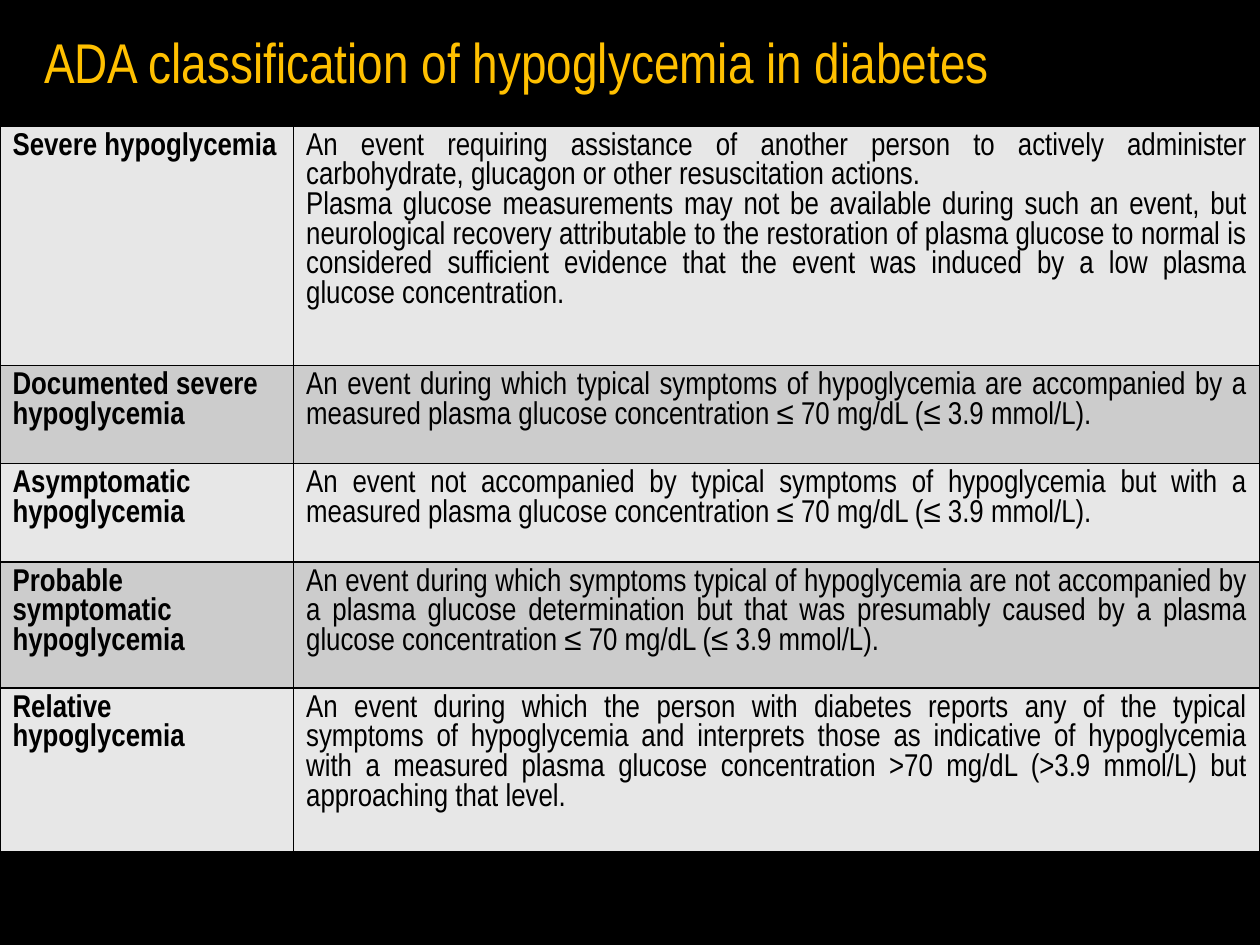
from lxml import etree
from pptx import Presentation
from pptx.dml.color import RGBColor
from pptx.enum import text
from pptx.oxml import ns
from pptx.util import Inches, Pt

BLACK = RGBColor(0x00, 0x00, 0x00)
GOLD = RGBColor(0xFF, 0xC0, 0x00)
LIGHT = RGBColor(0xE7, 0xE7, 0xE7)
GREY = RGBColor(0xCC, 0xCC, 0xCC)
FONT = "Arial Narrow"
TITLE = "ADA classification of hypoglycemia in diabetes"
COL_WIDTHS = [2.33, 7.67]
ROW_HEIGHTS = [1.9, 0.78, 0.78, 1, 1.3]
CLASSES = [
    ("Severe hypoglycemia",
     "An event requiring assistance of another person to actively administer "
     "carbohydrate, glucagon or other resuscitation actions.\n"
     "Plasma glucose measurements may not be available during such an event, but "
     "neurological recovery attributable to the restoration of plasma glucose to "
     "normal is considered sufficient evidence that the event was induced by a low "
     "plasma glucose concentration."),
    ("Documented severe hypoglycemia",
     "An event during which typical symptoms of hypoglycemia are accompanied by a "
     "measured plasma glucose concentration ≤ 70 mg/dL (≤ 3.9 mmol/L)."),
    ("Asymptomatic hypoglycemia",
     "An event not accompanied by typical symptoms of hypoglycemia but with a "
     "measured plasma glucose concentration ≤ 70 mg/dL (≤ 3.9 mmol/L)."),
    ("Probable symptomatic hypoglycemia",
     "An event during which symptoms typical of hypoglycemia are not accompanied by "
     "a plasma glucose determination but that was presumably caused by a plasma "
     "glucose concentration ≤ 70 mg/dL (≤ 3.9 mmol/L)."),
    ("Relative hypoglycemia",
     "An event during which the person with diabetes reports any of the typical "
     "symptoms of hypoglycemia and interprets those as indicative of hypoglycemia "
     "with a measured plasma glucose concentration >70 mg/dL (>3.9 mmol/L) but "
     "approaching that level."),
]


def set_attrs(obj, **values):
    for name, value in values.items():
        setattr(obj, name, value)


def write(tf, content, align, color, **font):
    tf.text = content
    for p in tf.paragraphs:
        p.alignment = align
        for r in p.runs:
            set_attrs(r.font, name=FONT, **font)
            r.font.color.rgb = color


def add_borders(cell, color, width):
    tc_pr = cell._tc.get_or_add_tcPr()
    for side in ("lnL", "lnR", "lnT", "lnB"):
        ln = etree.SubElement(tc_pr, ns.qn(f"a:{side}"), w=str(width))
        fill = etree.SubElement(ln, ns.qn("a:solidFill"))
        etree.SubElement(fill, ns.qn("a:srgbClr"), val=str(color))


def place_title(s, left, top, width, height):
    sp = s.shapes.title
    set_attrs(sp, left=left, top=top, width=width, height=height)
    tf = sp.text_frame
    write(tf, TITLE, text.PP_ALIGN.LEFT, GOLD, size=Pt(32))
    set_attrs(tf, word_wrap=False, vertical_anchor=text.MSO_ANCHOR.TOP,
              auto_size=text.MSO_AUTO_SIZE.SHAPE_TO_FIT_TEXT)


def place_table(s, left, top, width, height):
    table = s.shapes.add_table(len(CLASSES), 2, left, top, width, height).table
    set_attrs(table, first_row=False, horz_banding=False)
    for col, w in zip(table.columns, COL_WIDTHS):
        col.width = Inches(w)
    for i, (row, h, contents) in enumerate(zip(table.rows, ROW_HEIGHTS, CLASSES)):
        row.height = Inches(h)
        for j, (cell, content) in enumerate(zip(row.cells, contents)):
            align = text.PP_ALIGN.JUSTIFY if j else text.PP_ALIGN.LEFT
            write(cell.text_frame, content, align, BLACK, size=Pt(18), bold=j == 0)
            add_borders(cell, BLACK, Pt(1))
            cell.fill.solid()
            cell.fill.fore_color.rgb = GREY if i % 2 else LIGHT


def main():
    prs = Presentation()
    set_attrs(prs, slide_width=Inches(10), slide_height=Inches(7.5))
    s = prs.slides.add_slide(prs.slide_layouts[5])
    s.background.fill.solid()
    s.background.fill.fore_color.rgb = BLACK
    place_title(s, Inches(0.25), Inches(0.17), Inches(7.78), Inches(0.64))
    place_table(s, 0, Inches(1), prs.slide_width, Inches(sum(ROW_HEIGHTS)))
    prs.save("out.pptx")


if __name__ == "__main__":
    main()
